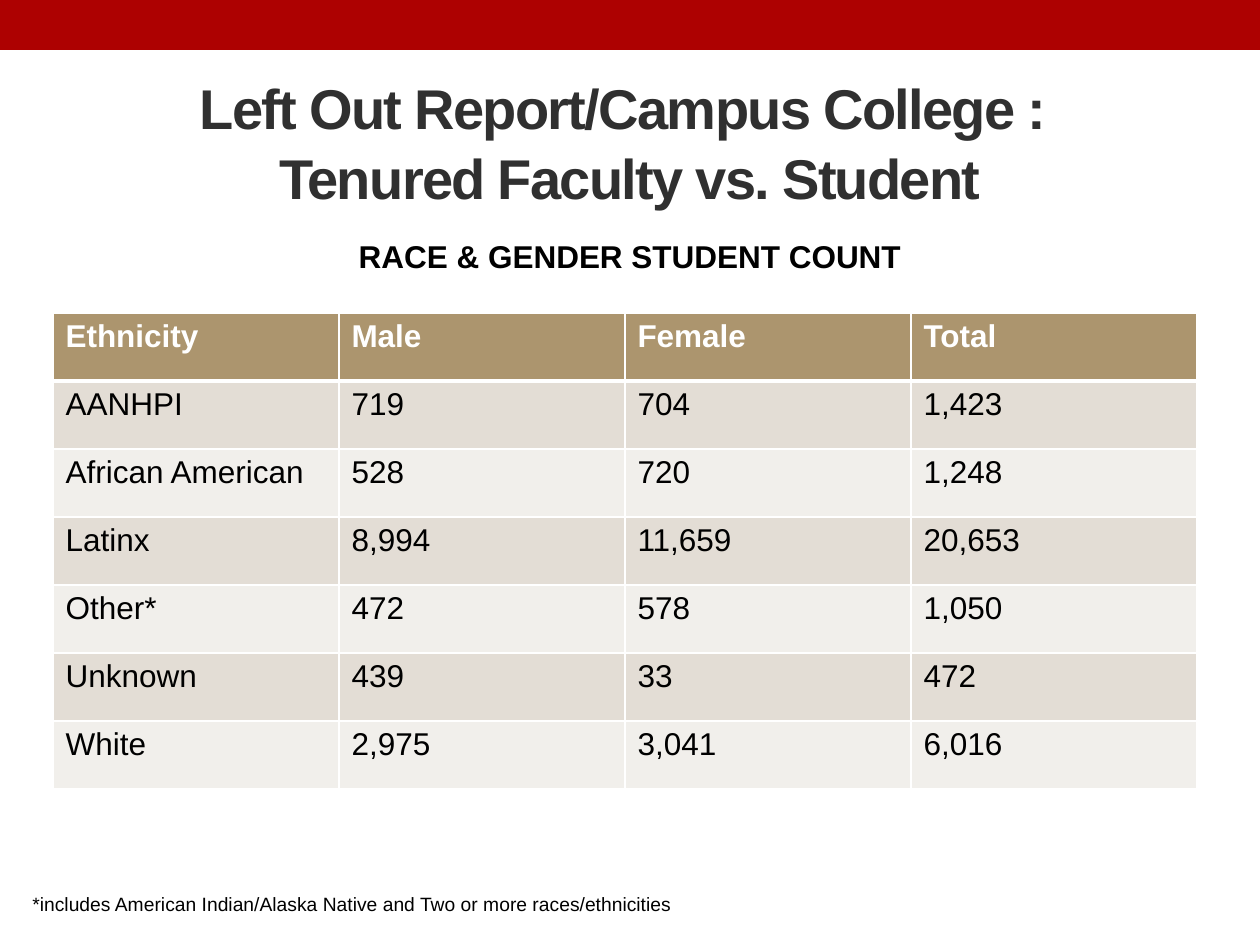
import pptx
import pptx.dml.color
import pptx.enum.shapes
import pptx.enum.text
import pptx.oxml
import pptx.oxml.ns
import pptx.util

PIXEL = 914400 / 126
WIDTH, HEIGHT = 1260, 945
FONT = "Arial"
CENTER = pptx.enum.text.PP_ALIGN.CENTER
MIDDLE = pptx.enum.text.MSO_ANCHOR.MIDDLE

TITLE = "Left Out Report/Campus College : \vTenured Faculty vs. Student"
SUBTITLE = "RACE & GENDER STUDENT COUNT"
FOOTNOTE = "*includes American Indian/Alaska Native and Two or more races/ethnicities"
STUDENT_COUNTS = [
    ("Ethnicity", "Male", "Female", "Total"),
    ("AANHPI", "719", "704", "1,423"),
    ("African American", "528", "720", "1,248"),
    ("Latinx", "8,994", "11,659", "20,653"),
    ("Other*", "472", "578", "1,050"),
    ("Unknown", "439", "33", "472"),
    ("White", "2,975", "3,041", "6,016"),
]

BANNER_RED = "AD0101"
HEADER_FILL = "AC956E"
BAND_FILLS = ("F1EFEB", "E3DDD5")
WHITE, BLACK, TITLE_GRAY = "FFFFFF", "000000", "303030"

BANNER_HEIGHT = 50
TABLE_LEFT, TABLE_TOP = 53, 313
COLUMN_WIDTH, ROW_HEIGHT = 286, 68


def px(*lengths):
    return [pptx.util.Emu(round(length * PIXEL)) for length in lengths]


def color(value):
    return pptx.dml.color.RGBColor.from_string(value)


def fill(target, value):
    target.fill.solid()
    target.fill.fore_color.rgb = color(value)


def write(frame, text, size, text_color, bold=False, paragraph_format=None, spacing=None):
    """Fill a text frame; spacing is the letter spacing in hundredths of a point."""
    paragraph = frame.paragraphs[0]
    paragraph.text = text
    for name, value in (paragraph_format or {}).items():
        setattr(paragraph, name, value)
    font_format = {"name": FONT, "size": pptx.util.Pt(size), "bold": bold}
    for run in paragraph.runs:
        for name, value in font_format.items():
            setattr(run.font, name, value)
        run.font.color.rgb = color(text_color)
        if spacing is not None:
            run._r.get_or_add_rPr().set("spc", str(spacing))


def add_text(slide, box, *content, anchor=None, **formats):
    frame = slide.shapes.add_textbox(*px(*box)).text_frame
    frame.word_wrap = True
    if anchor is not None:
        frame.vertical_anchor = anchor
    write(frame, *content, **formats)


def set_borders(cell, widths):
    """Draw white borders; widths maps a side (L, R, T, B) to points."""
    properties = cell._tc.get_or_add_tcPr()
    for position, (side, width) in enumerate(widths.items()):
        line = pptx.oxml.parse_xml(
            f'<a:ln{side} {pptx.oxml.ns.nsdecls("a")} w="{pptx.util.Pt(width)}">'
            f'<a:solidFill><a:srgbClr val="{WHITE}"/></a:solidFill></a:ln{side}>'
        )
        properties.insert(position, line)


def add_count_table(slide):
    row_count, column_count = len(STUDENT_COUNTS), len(STUDENT_COUNTS[0])
    box = px(TABLE_LEFT, TABLE_TOP, COLUMN_WIDTH * column_count, ROW_HEIGHT * row_count)
    table = slide.shapes.add_table(row_count, column_count, *box).table
    for row_index, values in enumerate(STUDENT_COUNTS):
        is_header = row_index == 0
        for column_index, value in enumerate(values):
            cell = table.cell(row_index, column_index)
            write(cell.text_frame, value, 18, WHITE if is_header else BLACK, is_header)
            fill(cell, HEADER_FILL if is_header else BAND_FILLS[row_index % 2])
            set_borders(cell, {"L": 1, "R": 1, "T": 3 if row_index == 1 else 1,
                               "B": 3 if is_header else 1})


def main():
    presentation = pptx.Presentation()
    presentation.slide_width, presentation.slide_height = px(WIDTH, HEIGHT)
    slide = presentation.slides.add_slide(presentation.slide_layouts[6])

    banner = slide.shapes.add_shape(
        pptx.enum.shapes.MSO_SHAPE.RECTANGLE, *px(0, 0, WIDTH, BANNER_HEIGHT))
    banner.shadow.inherit = False
    fill(banner, BANNER_RED)
    banner.line.fill.background()

    add_text(slide, (63, 73, 1134, 136), TITLE, 32, TITLE_GRAY, True, anchor=MIDDLE,
             paragraph_format={"alignment": CENTER, "line_spacing": 1.04}, spacing=-100)
    add_count_table(slide)
    add_text(slide, (20, 886, 682, 36), FOOTNOTE, 11, BLACK)
    add_text(slide, (106, 231, 1048, 89), SUBTITLE, 18, BLACK, True,
             paragraph_format={"alignment": CENTER})
    presentation.save("out.pptx")


if __name__ == "__main__":
    main()
